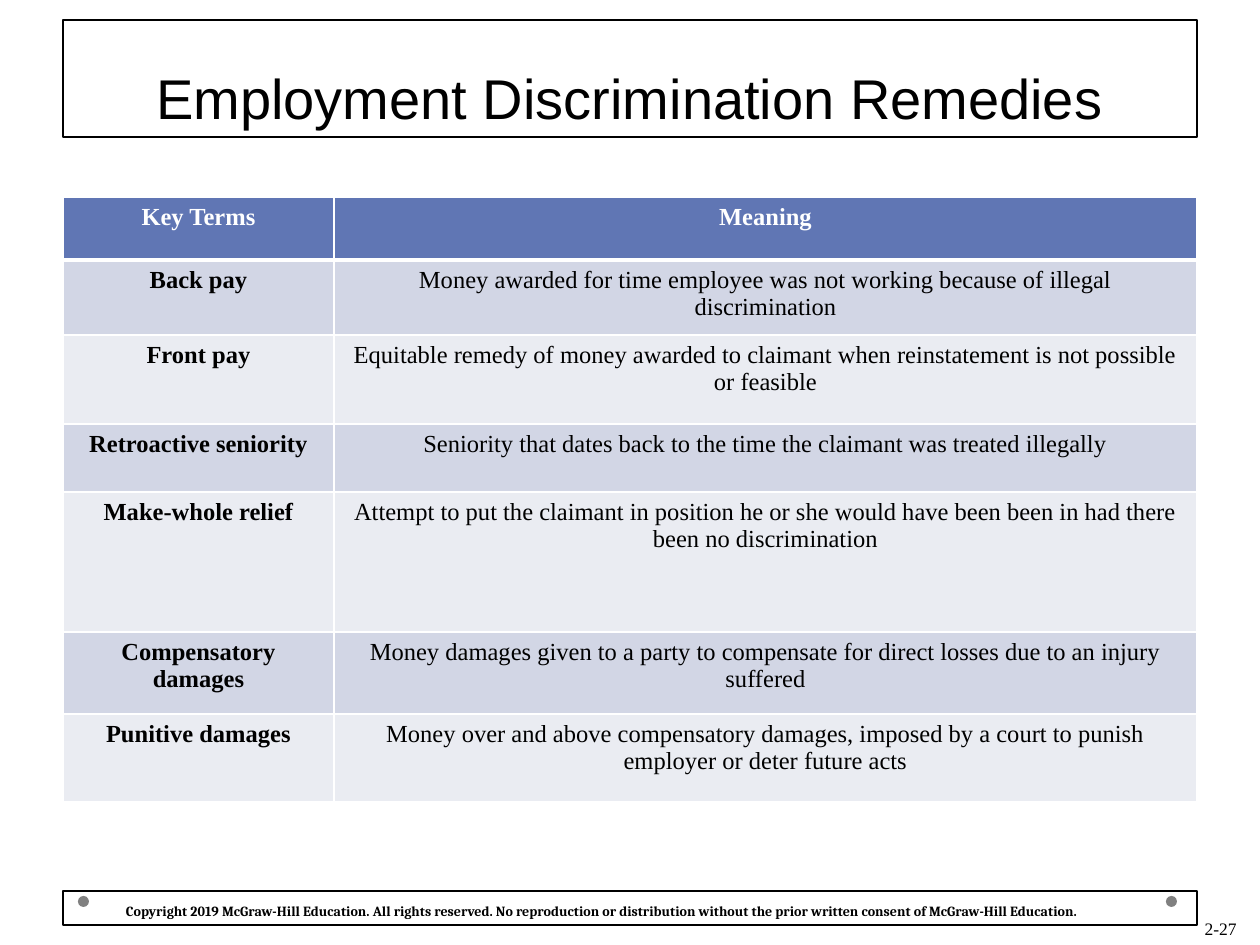
from lxml import etree
from pptx import Presentation, util as u
from pptx.dml.color import RGBColor
from pptx.enum import shapes, text
from pptx.oxml import ns

COLORS = {"ink": "000000", "paper": "FFFFFF", "header": "6076B4",
          "band": "D2D6E5", "light": "EAECF2", "dot": "808080"}
SERIF = "Times New Roman"
ROWS = [
    ("Key Terms", "Meaning"),
    ("Back pay", "Money awarded for time employee was not working because of illegal discrimination"),
    ("Front pay", "Equitable remedy of money awarded to claimant when reinstatement is not possible or feasible"),
    ("Retroactive seniority", "Seniority that dates back to the time the claimant was treated illegally"),
    ("Make-whole relief", "Attempt to put the claimant in position he or she would have been been in had there been no discrimination"),
    ("Compensatory damages", "Money damages given to a party to compensate for direct losses due to an injury suffered"),
    ("Punitive damages", "Money over and above compensatory damages, imposed by a court to punish employer or deter future acts"),
]


def px(n):
    return u.Emu(round(n * 914400 / 126))


def rgb(name):
    return RGBColor.from_string(COLORS[name])


class Deck:
    def __init__(self, width, height):
        self.prs = Presentation()
        self.prs.slide_width, self.prs.slide_height = px(width), px(height)
        self.s = self.prs.slides.add_slide(self.prs.slide_layouts[6])

    def add_text(self, tf, words, size, font=SERIF, color="ink", bold=False,
                 align=text.PP_ALIGN.CENTER):
        tf.word_wrap = True
        p = tf.paragraphs[0]
        p.alignment = align
        r = p.add_run()
        r.text = words
        r.font.size, r.font.name, r.font.bold = u.Pt(size), font, bold
        r.font.color.rgb = rgb(color)
        return p

    def dot(self, x, y, size):
        sp = self.s.shapes.add_shape(shapes.MSO_SHAPE.OVAL, px(x), px(y), px(size), px(size))
        sp.shadow.inherit = False
        sp.fill.solid()
        sp.fill.fore_color.rgb = rgb("dot")
        sp.line.fill.background()

    def frame(self, x, y, w, h, anchor):
        sp = self.s.shapes.add_shape(shapes.MSO_SHAPE.RECTANGLE, px(x), px(y), px(w), px(h))
        sp.shadow.inherit = False
        sp.fill.background()
        sp.line.color.rgb = rgb("ink")
        sp.line.width = u.Pt(0.75)
        sp.text_frame.vertical_anchor = anchor
        return sp.text_frame

    def label(self, x, y, w, h, words, size):
        tf = self.s.shapes.add_textbox(px(x), px(y), px(w), px(h)).text_frame
        tf.vertical_anchor = text.MSO_ANCHOR.BOTTOM
        self.add_text(tf, words, size, align=text.PP_ALIGN.RIGHT)

    def borders(self, cell, bottom, top):
        tc_pr = cell._tc.get_or_add_tcPr()
        for side, width in (("L", 1), ("R", 1), ("T", top), ("B", bottom)):
            ln = etree.SubElement(tc_pr, ns.qn(f"a:ln{side}"), w=str(u.Pt(width)))
            fill = etree.SubElement(ln, ns.qn("a:solidFill"))
            etree.SubElement(fill, ns.qn("a:srgbClr"), val=COLORS["paper"])

    def table(self, x, y, widths, heights, rows):
        tbl = self.s.shapes.add_table(len(rows), len(widths), px(x), px(y),
                                      px(sum(widths)), px(sum(heights))).table
        for col, w in zip(tbl.columns, widths):
            col.width = px(w)
        for i, (row, h, words) in enumerate(zip(tbl.rows, heights, rows)):
            row.height = px(h)
            fill = "header" if i == 0 else ("light", "band")[i % 2]
            for j, cell in enumerate(row.cells):
                self.borders(cell, bottom=3 if i == 0 else 1, top=3 if i == 1 else 1)
                cell.fill.solid()
                cell.fill.fore_color.rgb = rgb(fill)
                self.add_text(cell.text_frame, words[j], 14, bold=i == 0 or j == 0,
                              color="paper" if i == 0 else "ink")


def main():
    d = Deck(1260, 945)
    for x in (1166, 78):
        d.dot(x, 896, 11)
    d.label(955, 882, 294, 63, "2-27", 10)

    title = d.frame(63, 20, 1134, 117, text.MSO_ANCHOR.BOTTOM)
    p = d.add_text(title, "Employment Discrimination Remedies", 32, "Arial")
    p.line_spacing = u.Pt(58)

    d.table(63, 197, [271, 863], [63, 75, 89, 68, 140, 82, 88], ROWS)

    footer = d.frame(63, 891, 1134, 34, text.MSO_ANCHOR.MIDDLE)
    footer.margin_left, footer.margin_top, footer.margin_bottom = px(63), px(6), 0
    d.add_text(footer, "Copyright 2019 McGraw-Hill Education. All rights reserved. "
               "No reproduction or distribution without the prior written consent of "
               "McGraw-Hill Education.", 8, "Cambria", bold=True, align=text.PP_ALIGN.LEFT)
    d.prs.save("out.pptx")


if __name__ == "__main__":
    main()
